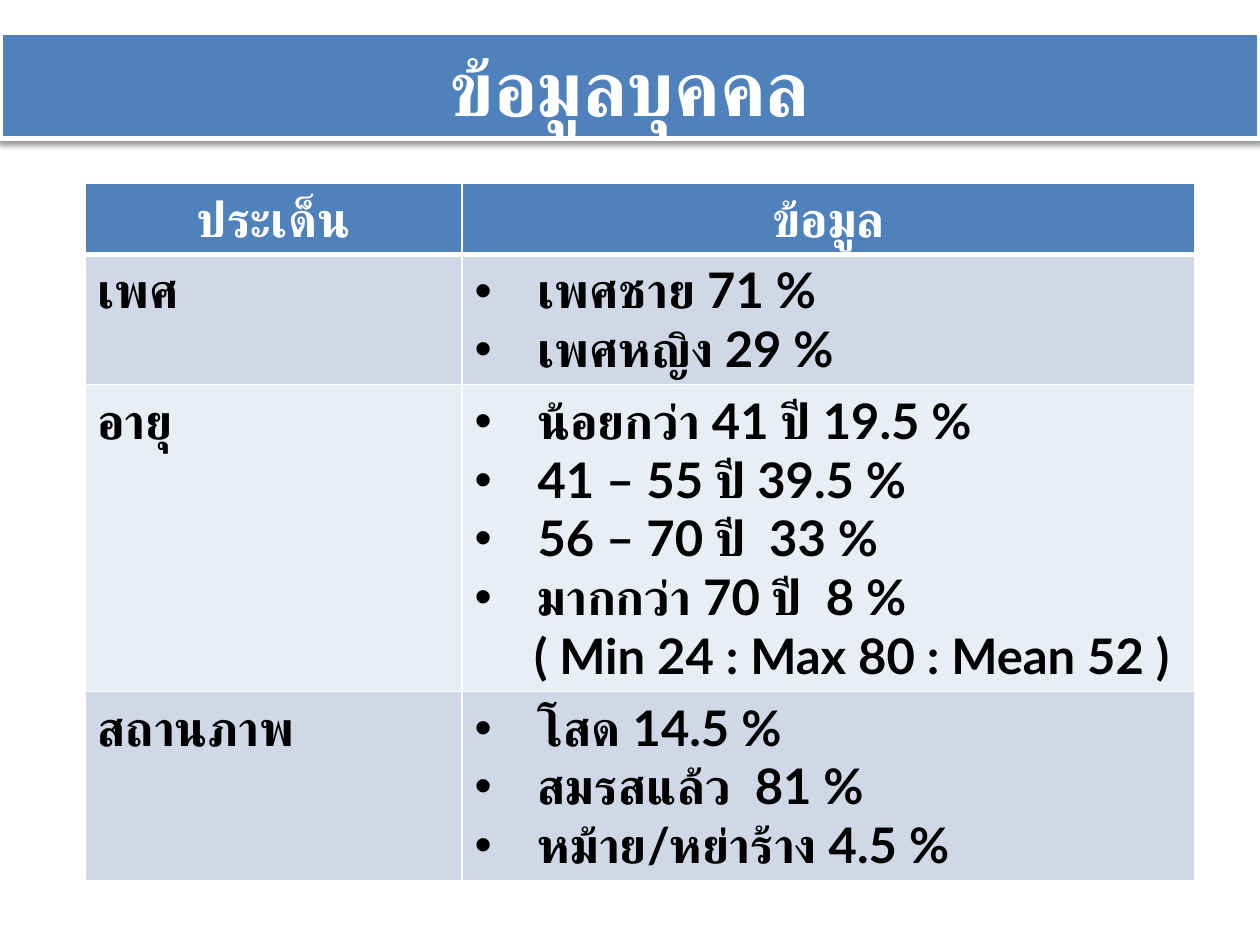
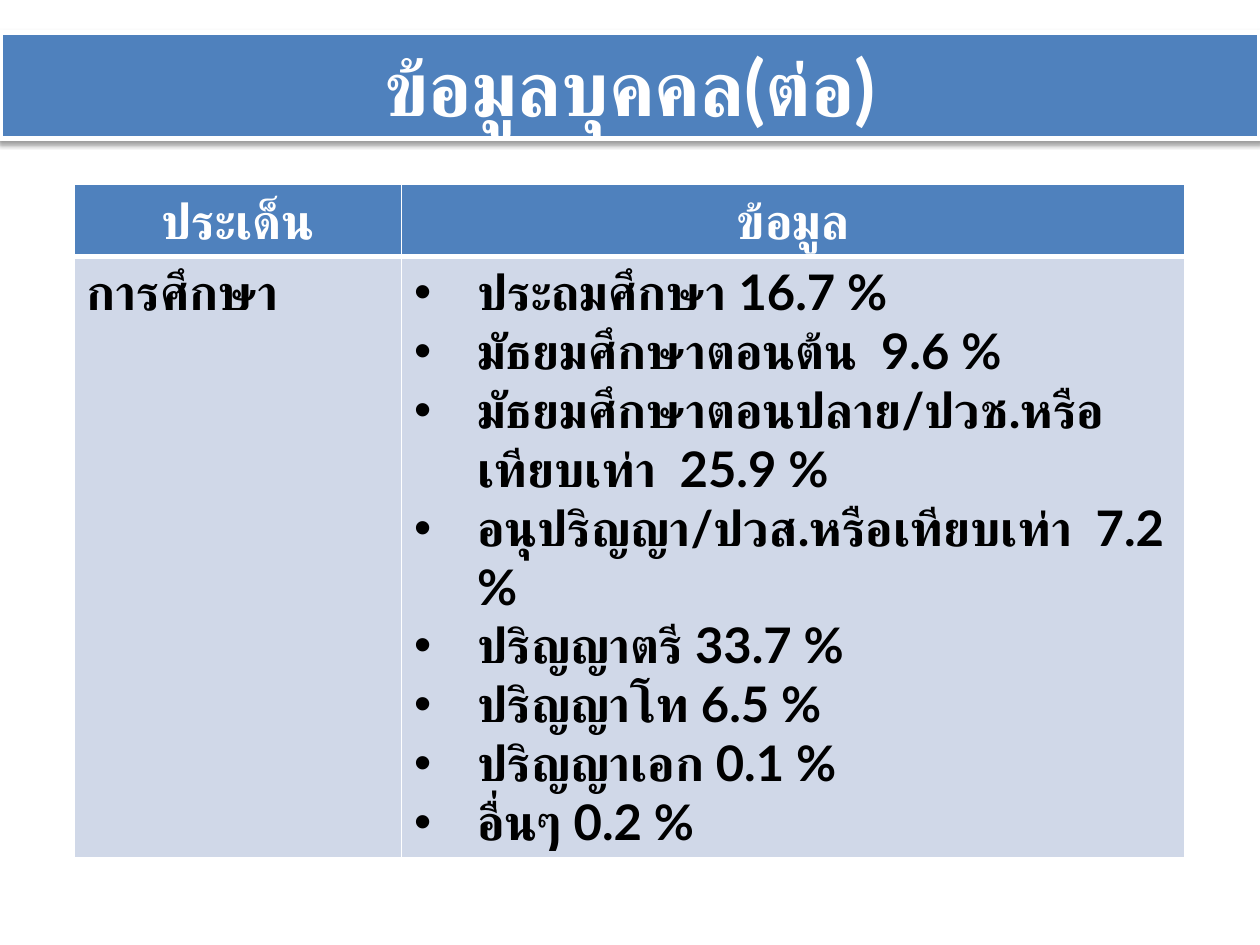
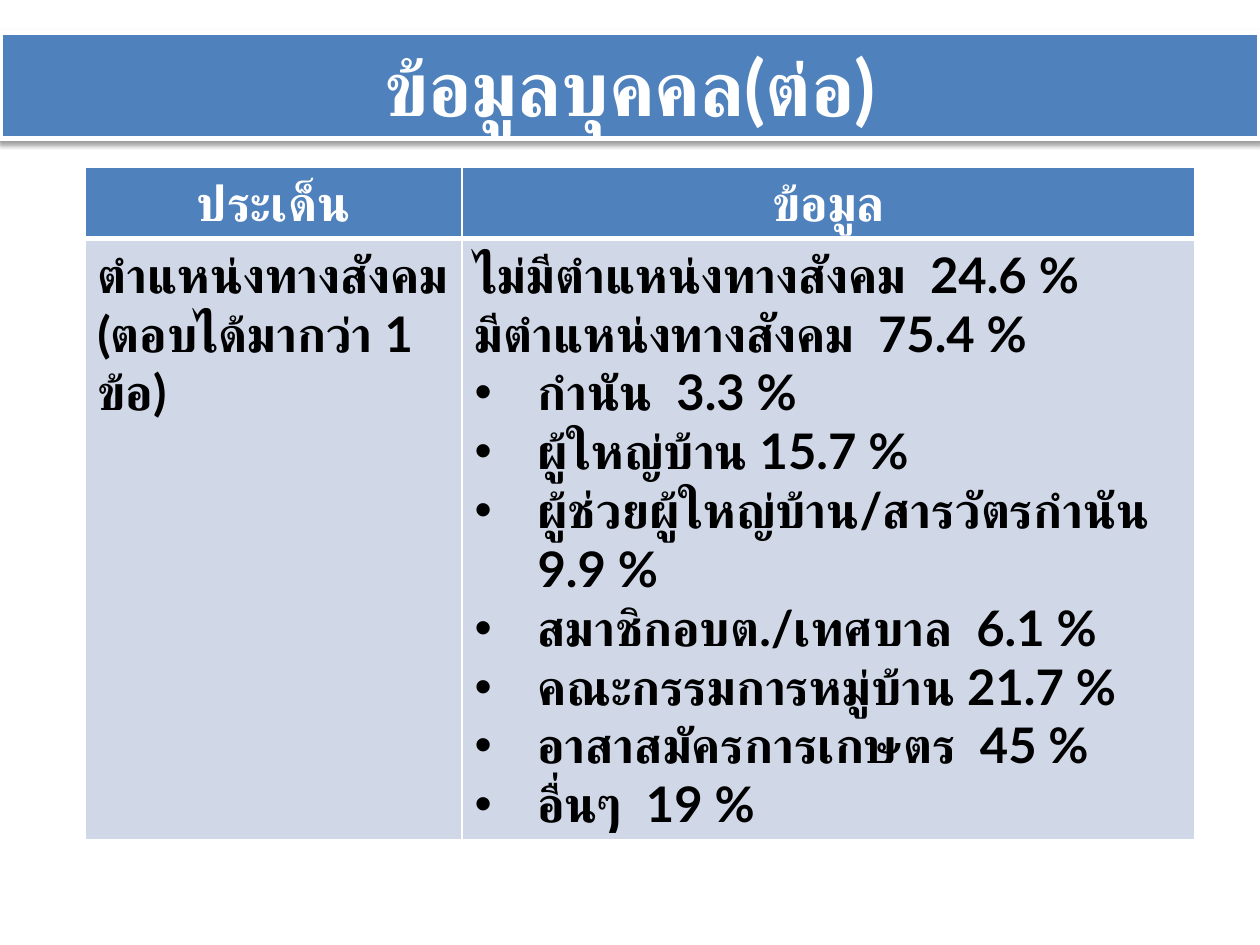
from dataclasses import dataclass

from lxml import etree
from pptx import Presentation
from pptx import util as u
from pptx.dml.color import RGBColor
from pptx.enum import shapes, text
from pptx.oxml import ns, parse_xml


@dataclass(frozen=True)
class Theme:
    blue: RGBColor = RGBColor(0x4F, 0x81, 0xBD)
    white: RGBColor = RGBColor(0xFF, 0xFF, 0xFF)
    black: RGBColor = RGBColor(0, 0, 0)
    bands: tuple = (RGBColor(0xD0, 0xD8, 0xE8), RGBColor(0xE9, 0xED, 0xF4))
    font: str = "Lato"
    title_size: int = 44
    table_size: int = 28
    thin: int = 1
    thick: int = 3


T = Theme()
LINE_HEIGHT = 33.6
CELL_MARGINS = 7.2
HANGING = 36
NOTE_INDENT = 34
HEADINGS = ["ประเด็น", "ข้อมูล"]

# Lines starting with "•" are bullets, lines starting with ">" are indented notes.
SLIDES = [
    dict(title="ข้อมูลบุคคล", left=48.5, top=104.5, cols=(215.5, 419), header=40, rows=[
        (["เพศ"], ["•เพศชาย 71 %", "•เพศหญิง 29 %"], 2),
        (["อายุ"], ["•น้อยกว่า 41 ปี 19.5 %", "•41 – 55 ปี 39.5 %", "•56 – 70 ปี  33 %",
                   "•มากกว่า 70 ปี  8 %", ">( Min 24 : Max 80 : Mean 52 )"], 5),
        (["สถานภาพ"], ["•โสด 14.5 %", "•สมรสแล้ว  81 %", "•หม้าย/หย่าร้าง 4.5 %"], 3),
    ]),
    dict(title="ข้อมูลบุคคล(ต่อ)", left=42.5, top=105.5, cols=(187, 447.5), header=41, rows=[
        (["การศึกษา"], ["•ประถมศึกษา 16.7 %", "•มัธยมศึกษาตอนต้น  9.6 %",
                       "•มัธยมศึกษาตอนปลาย/ปวช.หรือเทียบเท่า  25.9 %",
                       "•อนุปริญญา/ปวส.หรือเทียบเท่า  7.2 %", "•ปริญญาตรี 33.7 %",
                       "•ปริญญาโท 6.5 %", "•ปริญญาเอก 0.1 %", "•อื่นๆ 0.2 %"], 10),
    ]),
    dict(title="ข้อมูลบุคคล(ต่อ)", left=48.5, top=95.5, cols=(215.5, 419), header=34, rows=[
        (["ตำแหน่งทางสังคม", "(ตอบได้มากว่า 1 ข้อ)"],
         ["ไม่มีตำแหน่งทางสังคม  24.6 %", "มีตำแหน่งทางสังคม  75.4 %", "•กำนัน  3.3 %",
          "•ผู้ใหญ่บ้าน 15.7 %", "•ผู้ช่วยผู้ใหญ่บ้าน/สารวัตรกำนัน  9.9 %",
          "•สมาชิกอบต./เทศบาล  6.1 %", "•คณะกรรมการหมู่บ้าน 21.7 %",
          "•อาสาสมัครการเกษตร  45 %", "•อื่นๆ  19 %"], 10),
    ]),
]


def write(tf, lines, size, color, align=None):
    """Fill a text frame, one paragraph a line, turning line marks into indents."""
    for i, line in enumerate(lines):
        p = tf.paragraphs[0] if i == 0 else tf.add_paragraph()
        p.alignment = align
        pPr = p._p.get_or_add_pPr()
        if line[0] == "•":
            pPr.set("marL", str(u.Pt(HANGING)))
            pPr.set("indent", str(-u.Pt(HANGING)))
            etree.SubElement(pPr, ns.qn("a:buFont"), typeface="Arial")
            etree.SubElement(pPr, ns.qn("a:buChar"), char="•")
        elif line[0] == ">":
            pPr.set("marL", str(u.Pt(NOTE_INDENT)))
            pPr.set("indent", "0")
        r = p.add_run()
        r.text = line.lstrip("•>")
        r.font.size = u.Pt(size)
        r.font.bold = True
        r.font.color.rgb = color
        r.font.name = T.font
        etree.SubElement(r._r.get_or_add_rPr(), ns.qn("a:cs"), typeface=T.font)


def style_cell(cell, fill, bottom):
    tcPr = cell._tc.get_or_add_tcPr()
    for side, width in (("L", T.thin), ("R", T.thin), ("T", T.thin), ("B", bottom)):
        tcPr.append(parse_xml(
            f'<a:ln{side} {ns.nsdecls("a")} w="{u.Pt(width)}"><a:solidFill>'
            f'<a:srgbClr val="{T.white}"/></a:solidFill></a:ln{side}>'))
    cell.fill.solid()
    cell.fill.fore_color.rgb = fill


prs = Presentation()
prs.slide_width, prs.slide_height = u.Pt(720), u.Pt(540)

for page in SLIDES:
    s = prs.slides.add_slide(prs.slide_layouts[6])

    band = s.shapes.add_shape(shapes.MSO_SHAPE.RECTANGLE, 0, u.Pt(18.75), u.Pt(720), u.Pt(60.5))
    band.fill.solid()
    band.fill.fore_color.rgb = T.blue
    band.line.color.rgb = T.white
    band.line.width = u.Pt(T.thick)
    band._element.spPr.append(parse_xml(
        f'<a:effectLst {ns.nsdecls("a")}><a:outerShdw blurRad="{u.Pt(3.1)}" dist="{u.Pt(1.6)}" '
        'dir="5400000" rotWithShape="0"><a:srgbClr val="000000"><a:alpha val="38000"/>'
        '</a:srgbClr></a:outerShdw></a:effectLst>'))
    tf = band.text_frame
    tf.word_wrap = True
    tf.auto_size = text.MSO_AUTO_SIZE.SHAPE_TO_FIT_TEXT
    write(tf, [page["title"]], T.title_size, T.white, text.PP_ALIGN.CENTER)

    heights = [page["header"]] + [n * LINE_HEIGHT + CELL_MARGINS for *_, n in page["rows"]]
    table = s.shapes.add_table(len(heights), 2, u.Pt(page["left"]), u.Pt(page["top"]),
                               u.Pt(sum(page["cols"])), u.Pt(sum(heights))).table
    for column, width in zip(table.columns, page["cols"]):
        column.width = u.Pt(width)
    for row, height in zip(table.rows, heights):
        row.height = u.Pt(height)

    for c, heading in enumerate(HEADINGS):
        cell = table.cell(0, c)
        style_cell(cell, T.blue, T.thick)
        write(cell.text_frame, [heading], T.table_size, T.white, text.PP_ALIGN.CENTER)
    for i, (topic, answers, _) in enumerate(page["rows"]):
        for c, lines in enumerate((topic, answers)):
            cell = table.cell(i + 1, c)
            style_cell(cell, T.bands[i % 2], T.thin)
            write(cell.text_frame, lines, T.table_size, T.black)

prs.save("out.pptx")
